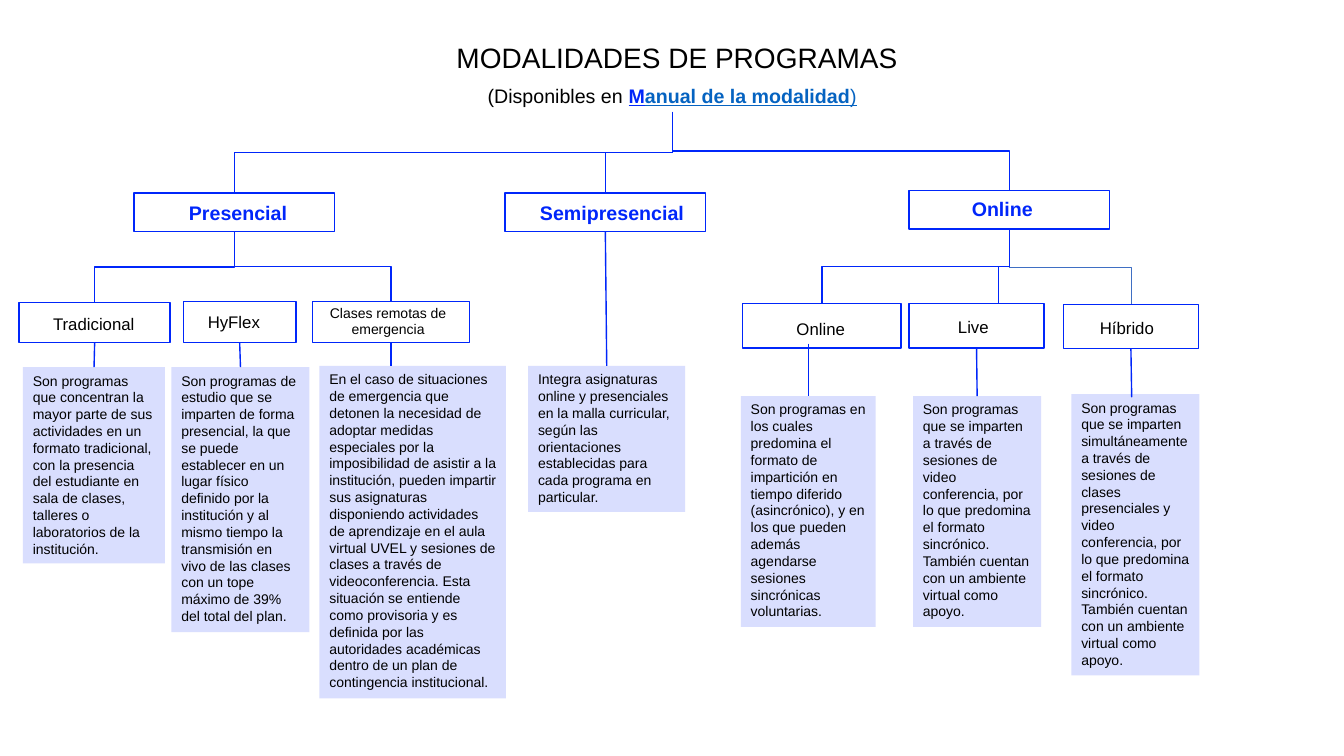
from lxml.etree import SubElement
from pptx import Presentation
from pptx.dml.color import RGBColor
from pptx.enum.shapes import MSO_CONNECTOR, MSO_SHAPE
from pptx.enum.text import MSO_ANCHOR, MSO_AUTO_SIZE, PP_ALIGN
from pptx.oxml.ns import qn
from pptx.util import Cm, Pt

FONT = "Arial"
COLORS = {"blue": "0026FA", "link": "0563C1", "text": "000000", "branch": "3F6FC3"}

# Content: all rectangles are (left, top, width, height) in cm
TITLE = ("MODALIDADES DE PROGRAMAS", (11.25, 0.89, 11.73, 1.12))
SUBTITLE_RECT = (12.01, 1.98, 9.86, 0.86)
SUBTITLE = [  # text, colour, bold, underline
    ("(Disponibles en ", "text", False, False),
    ("M", "blue", True, True),
    ("anual de la modalidad", "link", True, True),
    (")", "link", False, True),
]
# key: (label, size, bold, box, label rectangle)
BOXES = {
    "presencial": ("Presencial", 14, True, (3.38, 4.86, 5.05, 0.97), (4.5, 4.95, 3, 0.86)),
    "semi": ("Semipresencial", 14, True, (12.73, 4.86, 5.05, 0.97), (13.34, 4.93, 4.17, 0.86)),
    "online": ("Online", 14, True, (22.91, 4.8, 5.05, 0.97), (24.23, 4.85, 2.06, 0.86)),
    "tradicional": ("Tradicional", 12, False, (0.48, 7.62, 3.81, 1.02), (1.07, 7.77, 2.59, 0.76)),
    "hyflex": ("HyFlex", 12, False, (4.62, 7.6, 2.84, 1.04), (4.98, 7.72, 1.83, 0.76)),
    "remotas": ("Clases remotas de emergencia", 10, False,
                (7.87, 7.6, 3.96, 1.04), (7.67, 7.54, 4.22, 1.12)),
    "diferido": ("Online", 12, False, (18.72, 7.65, 3.99, 1.12), (19.81, 7.9, 1.75, 0.76)),
    "live": ("Live", 12, False, (22.91, 7.65, 3.4, 1.12), (23.88, 7.85, 1.3, 0.76)),
    "hibrido": ("Híbrido", 12, False, (26.8, 7.67, 3.4, 1.12), (27.46, 7.87, 1.88, 0.76)),
}
# key: (rectangle, text)
NOTES = {
    "semi": ((13.31, 9.22, 3.96, 3.68),
             "Integra asignaturas online y presenciales en la malla curricular, según las "
             "orientaciones establecidas para cada programa en particular."),
    "tradicional": ((0.58, 9.25, 3.58, 4.95),
                    "Son programas que concentran la mayor parte de sus actividades en un formato "
                    "tradicional, con la presencia del estudiante en sala de clases, talleres o "
                    "laboratorios de la institución."),
    "hyflex": ((4.32, 9.25, 3.48, 6.68),
               "Son programas de estudio que se imparten de forma presencial, la que se puede "
               "establecer en un lugar físico definido por la institución y al mismo tiempo la "
               "transmisión en vivo de las clases con un tope máximo de 39% del total del plan."),
    "remotas": ((8.05, 9.22, 4.7, 8.38),
                "En el caso de situaciones de emergencia que detonen la necesidad de adoptar "
                "medidas especiales por la imposibilidad de asistir a la institución, pueden "
                "impartir sus asignaturas disponiendo actividades de aprendizaje en el aula "
                "virtual UVEL y sesiones de clases a través de videoconferencia. Esta situación "
                "se entiende como provisoria y es definida por las autoridades académicas dentro "
                "de un plan de contingencia institucional."),
    "diferido": ((18.67, 9.98, 3.4, 5.82),
                 "Son programas en los cuales predomina el formato de impartición en tiempo "
                 "diferido (asincrónico), y en los que pueden además agendarse sesiones "
                 "sincrónicas voluntarias."),
    "live": ((23.01, 9.98, 3.23, 5.82),
             "Son programas que se imparten a través de sesiones de video conferencia, por lo que "
             "predomina el formato sincrónico. También cuentan con un ambiente virtual como apoyo."),
    "hibrido": ((27, 9.93, 3.23, 7.09),
                "Son programas que se imparten simultáneamente a través de sesiones de clases "
                "presenciales y video conferencia, por lo que predomina el formato sincrónico. "
                "También cuentan con un ambiente virtual como apoyo."),
}
HUB = (16.94, 2.82)
TREE = [  # parent, child, x where the line lands if not the child's middle
    (None, "presencial", None), (None, "semi", None), (None, "online", None),
    ("presencial", "tradicional", None), ("presencial", "remotas", None),
    ("online", "diferido", None), ("online", "live", 25.17),
]
# Vertical links that miss the middle of one side: free end point
FREE_START = {"diferido": (20.37, 8.66)}
FREE_END = {"remotas": (9.85, 9.22), "hibrido": (28.52, 10.01)}
HYBRID_BRANCH = ((25.43, 6.73), (28.52, 7.67))

prs = Presentation()
prs.slide_width, prs.slide_height = Cm(33.87), Cm(19.05)
s = prs.slides.add_slide(prs.slide_layouts[5])


def rgb(name):
    return RGBColor.from_string(COLORS[name])


def write(sp, runs, size, align, wrap):
    tf = sp.text_frame
    tf.word_wrap = wrap
    tf.auto_size = MSO_AUTO_SIZE.SHAPE_TO_FIT_TEXT
    tf.vertical_anchor = MSO_ANCHOR.TOP
    p = tf.paragraphs[0]
    p.alignment = align
    for text, color, bold, underline in runs:
        r = p.add_run()
        r.text = text
        r.font.name, r.font.size = FONT, Pt(size)
        r.font.bold, r.font.underline = bold, underline
        r.font.color.rgb = rgb(color)


def rectangle(rect):
    sp = s.shapes.add_shape(MSO_SHAPE.RECTANGLE, *map(Cm, rect))
    sp.shadow.inherit = False
    return sp


def connector(kind, start, end, color="blue", width=1):
    c = s.shapes.add_connector(kind, *map(Cm, start + end))
    c.line.color.rgb, c.line.width = rgb(color), Pt(width)
    SubElement(c._element.spPr, qn("a:effectLst"))
    return c


def elbow_down(start, end):
    """Elbow that leaves downwards: a horizontal elbow turned a quarter."""
    (x1, y1), (x2, y2) = start, end
    cx, cy = (x1 + x2) / 2, (y1 + y2) / 2
    w, h = y2 - y1, abs(x2 - x1)
    c = connector(MSO_CONNECTOR.ELBOW, (cx - w / 2, cy - h / 2), (cx + w / 2, cy + h / 2))
    xfrm = c._element.spPr.find(qn("a:xfrm"))
    xfrm.set("rot", "5400000" if x2 < x1 else "16200000")
    if x2 > x1:
        xfrm.set("flipH", "1")


def top_mid(rect):
    return rect[0] + rect[2] / 2, rect[1]


def bottom_mid(rect):
    return rect[0] + rect[2] / 2, rect[1] + rect[3]


# Title and subtitle
title = s.shapes.title
title.left, title.top, title.width, title.height = map(Cm, TITLE[1])
write(title, [(TITLE[0], "text", False, False)], 20, PP_ALIGN.LEFT, False)
write(s.shapes.add_textbox(*map(Cm, SUBTITLE_RECT)), SUBTITLE, 14, PP_ALIGN.CENTER, False)

# Descriptions on a translucent fill
notes = {}
for key, (rect, text) in NOTES.items():
    sp = notes[key] = rectangle(rect)
    sp.fill.solid()
    sp.fill.fore_color.rgb = rgb("blue")
    SubElement(sp._element.spPr.find(".//" + qn("a:srgbClr")), qn("a:alpha")).set("val", "15000")
    sp.line.fill.background()
    write(sp, [(text, "text", False, False)], 10, PP_ALIGN.LEFT, True)

# Outlined boxes and their labels
boxes = {}
for key, (label, size, bold, rect, label_rect) in BOXES.items():
    sp = boxes[key] = rectangle(rect)
    sp.fill.background()
    sp.line.color.rgb, sp.line.width = rgb("blue"), Pt(1)
    write(s.shapes.add_textbox(*map(Cm, label_rect)),
          [(label, "blue" if bold else "text", bold, False)], size, PP_ALIGN.CENTER, size == 10)

# Tree branches
for parent, child, x in TREE:
    start = bottom_mid(BOXES[parent][3]) if parent else HUB
    mid_x, y = top_mid(BOXES[child][3])
    elbow_down(start, (x or mid_x, y))
branch = connector(MSO_CONNECTOR.ELBOW, *HYBRID_BRANCH, "branch", 0.75)
branch._element.spPr.find(qn("a:prstGeom")).set("prst", "bentConnector2")

# Links from each box to its description
for key, (rect, _) in NOTES.items():
    start = FREE_START.get(key, bottom_mid(BOXES[key][3]))
    end = FREE_END.get(key, top_mid(rect))
    c = connector(MSO_CONNECTOR.STRAIGHT, start, end)
    if key not in FREE_START:
        c.begin_connect(boxes[key], 2)
    if key not in FREE_END:
        c.end_connect(notes[key], 0)

prs.save("out.pptx")
